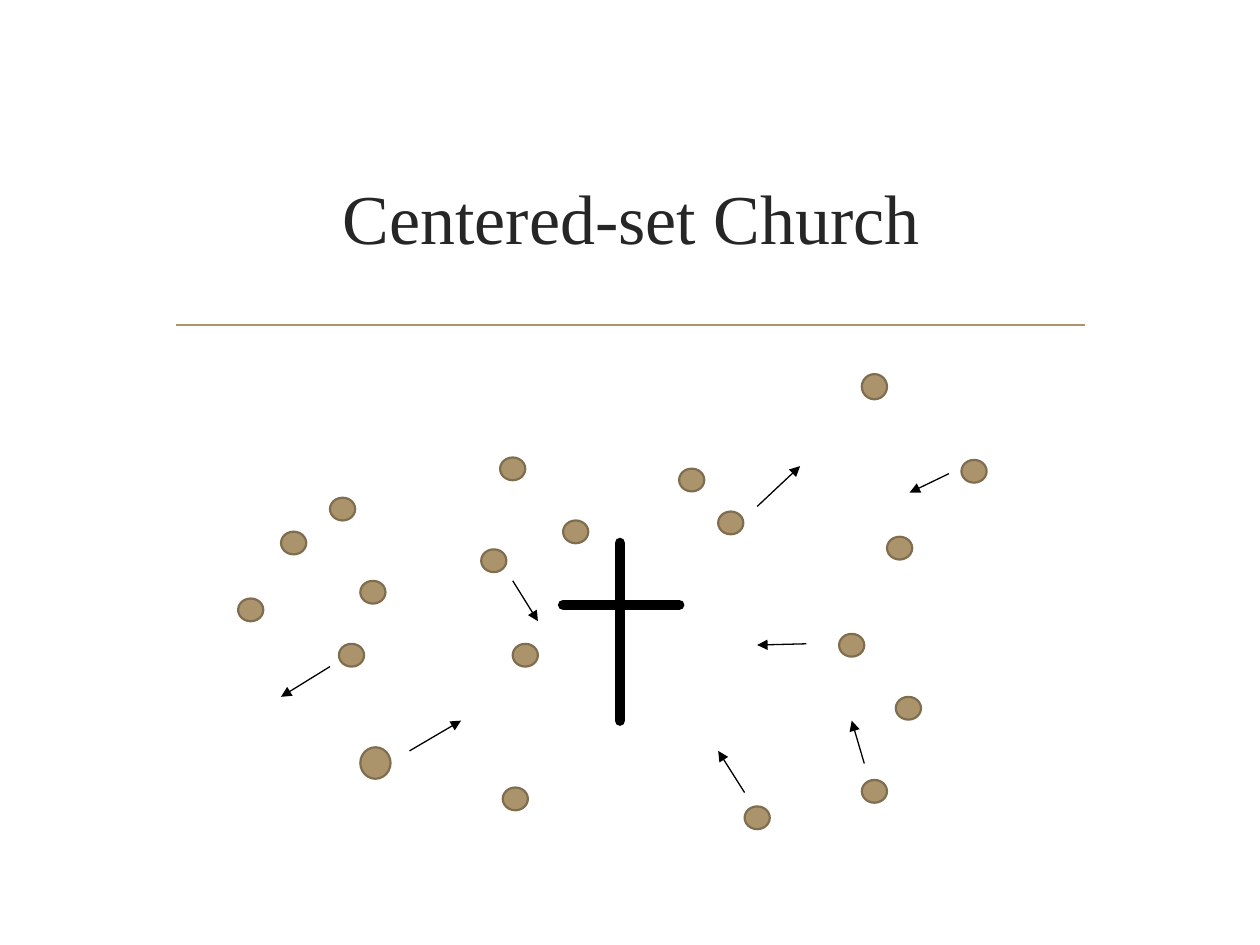
from lxml import etree
from pptx import Presentation
from pptx.dml.color import RGBColor
from pptx.enum.shapes import MSO_CONNECTOR, MSO_SHAPE
from pptx.enum.text import MSO_ANCHOR, PP_ALIGN
from pptx.oxml.ns import qn
from pptx.util import Pt

STRAIGHT = MSO_CONNECTOR.STRAIGHT
OVAL = MSO_SHAPE.OVAL
MIDDLE = MSO_ANCHOR.MIDDLE
CENTER = PP_ALIGN.CENTER

TAN = RGBColor(0xAB, 0x94, 0x6B)
DARK_TAN = RGBColor(0x7F, 0x6D, 0x4F)
CHARCOAL = RGBColor(0x26, 0x26, 0x26)
BLACK = RGBColor(0, 0, 0)

PERSON_SIZE = (14.4, 13)
TALL_PERSON_SIZE = (14.4, 14.4)
LARGE_PERSON_SIZE = (17.3, 18)

prs = Presentation()
prs.slide_width = Pt(720)
prs.slide_height = Pt(540)
slide = prs.slides.add_slide(prs.slide_layouts[5])


def add_line(start, end, color, width):
    line = slide.shapes.add_connector(
        STRAIGHT, *(Pt(value) for value in (*start, *end)))
    line.line.color.rgb = color
    line.line.width = Pt(width)
    etree.SubElement(line._element.spPr, qn("a:effectLst"))
    return line


# Title and the rule below it
title = slide.shapes.title
title.left, title.top = Pt(92.9), Pt(72)
title.width, title.height = Pt(535.7), Pt(103)
title.text_frame.text = "Centered-set Church"
title.text_frame.vertical_anchor = MIDDLE
heading = title.text_frame.paragraphs[0]
heading.alignment = CENTER
heading.font.name = "Times New Roman"
heading.font.size = Pt(40)
heading.font.color.rgb = CHARCOAL

add_line((100.8, 185.8), (619.9, 185.8), TAN, 1.25)

# People around the center: left, top
people = [
    (285.8, 261.4), (188.6, 284.4), (193.7, 367.9), (293, 367.9),
    (410.4, 292.3), (511.9, 398.2), (549.4, 262.8), (136.1, 342),
    (506.9, 306.7), (275, 313.9), (388.1, 267.8), (205.9, 331.9),
    (321.8, 297.4), (492.5, 445.7), (160.6, 303.8), (287.3, 450),
    (425.5, 460.8), (479.5, 362.2),
]
placed_people = [(place, PERSON_SIZE) for place in people]
placed_people += [((492.5, 213.8), TALL_PERSON_SIZE),
                  ((205.9, 427), LARGE_PERSON_SIZE)]
for place, size in placed_people:
    person = slide.shapes.add_shape(
        OVAL, *(Pt(value) for value in (*place, *size)))
    person.shadow.inherit = False
    person.fill.solid()
    person.fill.fore_color.rgb = TAN
    person.line.color.rgb = DARK_TAN
    person.line.width = Pt(1.25)

# Cross at the center
cross_beams = [((354.2, 310.3), (354.2, 411.8)),
               ((321.8, 345.6), (388.1, 345.6))]
for start, end in cross_beams:
    beam = add_line(start, end, BLACK, 6)
    beam.line._get_or_add_ln().set("cap", "rnd")

# Directions in which people move: start, end
movements = [
    ((293, 331.9), (307.4, 355)),
    ((460.8, 367.9), (432.7, 368.6)),
    ((432.7, 289.4), (457.2, 266.4)),
    ((188.6, 380.9), (160.6, 398.2)),
    ((234, 429.1), (263.5, 411.8)),
    ((542.2, 270.7), (519.8, 281.5)),
    ((493.9, 436.3), (486.7, 411.8)),
    ((425.5, 452.9), (410.4, 429.1)),
]
for start, end in movements:
    arrow = add_line(start, end, BLACK, 0.75)
    etree.SubElement(arrow.line._get_or_add_ln(), qn("a:tailEnd"), type="triangle")

prs.save("out.pptx")
